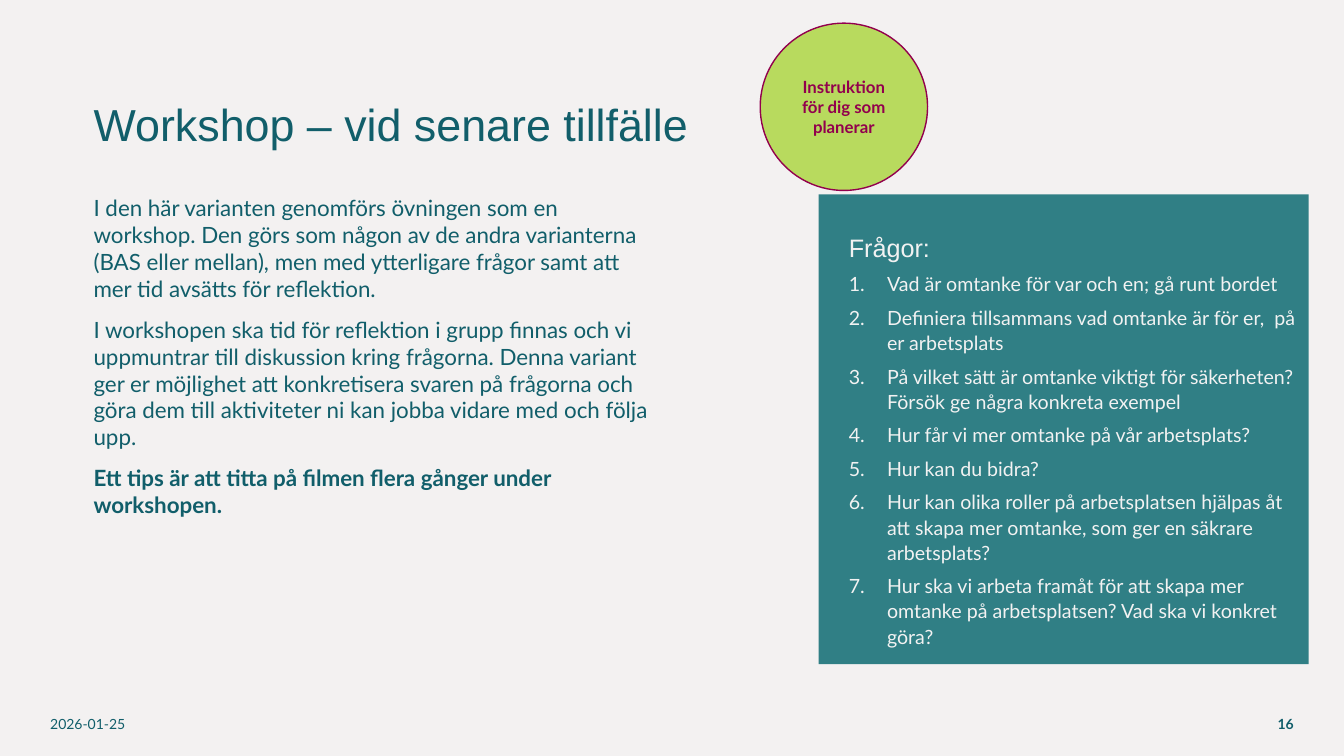
from pptx import Presentation
from pptx.dml.color import RGBColor
from pptx.enum import shapes, text
from pptx.oxml.ns import qn
from pptx.util import Inches, Pt
from lxml import etree

BACKGROUND = RGBColor(0xF3, 0xF1, 0xF1)
PETROL = RGBColor(0x11, 0x5E, 0x6A)
TEAL = RGBColor(0x30, 0x7F, 0x85)
OFF_WHITE = RGBColor(0xF2, 0xF2, 0xF2)
LIME = RGBColor(0xB8, 0xDA, 0x5E)
PLUM = RGBColor(0x92, 0x00, 0x4D)

INTRO = [
    "I den här varianten genomförs övningen som en workshop. Den görs som någon av "
    "de andra varianterna (BAS eller mellan), men med ytterligare frågor samt att "
    "mer tid avsätts för reflektion.",
    "I workshopen ska tid för reflektion i grupp finnas och vi uppmuntrar till "
    "diskussion kring frågorna. Denna variant ger er möjlighet att konkretisera "
    "svaren på frågorna och göra dem till aktiviteter ni kan jobba vidare med och "
    "följa upp.",
]
TIP = "Ett tips är att titta på filmen flera gånger under workshopen."
QUESTIONS = [
    "Vad är omtanke för var och en; gå runt bordet",
    "Definiera tillsammans vad omtanke är för er,  på er arbetsplats",
    "På vilket sätt är omtanke viktigt för säkerheten? Försök ge några konkreta exempel",
    "Hur får vi mer omtanke på vår arbetsplats?",
    "Hur kan du bidra?",
    "Hur kan olika roller på arbetsplatsen hjälpas åt att skapa mer omtanke, som ger "
    "en säkrare arbetsplats?",
    "Hur ska vi arbeta framåt för att skapa mer omtanke på arbetsplatsen? Vad ska vi "
    "konkret göra?",
]


def set_all(target, values):
    for name, value in values.items():
        setattr(target, name, value)


def add_box(page, place, **frame_format):
    box = page.shapes.add_textbox(*map(Inches, place))
    set_all(box.text_frame, {"word_wrap": True, **frame_format})
    return box.text_frame


def add_figure(page, kind, place, fill):
    figure = page.shapes.add_shape(kind, *map(Inches, place))
    figure.shadow.inherit = False
    figure.fill.solid()
    figure.fill.fore_color.rgb = fill
    figure.line.fill.background()
    return figure


def number(para):
    """Number the paragraph with a hanging indent."""
    props = para._p.get_or_add_pPr()
    indent = Inches(0.38)
    props.set("marL", str(indent))
    props.set("indent", str(-indent))
    font = etree.SubElement(props, qn("a:buFont"))
    font.set("typeface", "+mj-lt")
    etree.SubElement(props, qn("a:buAutoNum")).set("type", "arabicPeriod")


def write(frame, wording, size, color, name="Lato", bold=False, numbered=False, **layout):
    """Fill the first empty paragraph of the frame, or add the next one."""
    para = frame.paragraphs[0] if not frame.text else frame.add_paragraph()
    set_all(para, layout)
    if numbered:
        number(para)
    span = para.add_run()
    span.text = wording
    set_all(span.font, {"name": name, "size": Pt(size), "bold": bold})
    span.font.color.rgb = color


def add_intro(page):
    frame = add_box(page, (0.83, 1.69, 5.83, 4.76), margin_top=Inches(0.24))
    for index, wording in enumerate(INTRO):
        write(frame, wording, 16, PETROL, space_before=Pt(10 if index else 0))
    write(frame, TIP, 16, PETROL, bold=True, space_before=Pt(10))


def add_questions(page):
    add_figure(page, shapes.MSO_SHAPE.RECTANGLE, (8.12, 1.93, 4.86, 4.66), TEAL)
    frame = add_box(page, (8.32, 2.23, 4.67, 4.68))
    spacing = {"line_spacing": 1.07, "space_after": Pt(6)}
    write(frame, "Frågor:", 18, OFF_WHITE, "Arial", **spacing)
    for question in QUESTIONS:
        write(frame, question, 14, OFF_WHITE, numbered=True, **spacing)


def add_badge(page):
    badge = add_figure(page, shapes.MSO_SHAPE.OVAL, (7.54, 0.23, 1.66, 1.66), LIME)
    badge.line.color.rgb = PLUM
    badge.line.width = Pt(1)
    set_all(badge.text_frame, {"word_wrap": True, "vertical_anchor": text.MSO_ANCHOR.MIDDLE})
    write(badge.text_frame, "Instruktion för dig som planerar", 12, PLUM, bold=True,
          alignment=text.PP_ALIGN.CENTER)


def add_footer(page):
    middle = text.MSO_ANCHOR.MIDDLE
    date = add_box(page, (0.4, 6.98, 1.23, 0.4), vertical_anchor=middle)
    write(date, "2026-01-25", 10, PETROL)
    page_number = add_box(page, (9.93, 6.98, 3, 0.4), vertical_anchor=middle)
    write(page_number, "16", 10, PETROL, bold=True, alignment=text.PP_ALIGN.RIGHT)


def main():
    deck = Presentation()
    set_all(deck, {"slide_width": Inches(13.33), "slide_height": Inches(7.5)})
    page = deck.slides.add_slide(deck.slide_layouts[6])
    page.background.fill.solid()
    page.background.fill.fore_color.rgb = BACKGROUND

    # Left side: title and introduction
    add_intro(page)
    add_footer(page)
    title = add_box(page, (0.83, 0.86, 10.89, 0.98), margin_top=Inches(0.1))
    write(title, "Workshop – vid senare tillfälle", 32, PETROL, "Arial")

    # Right side: question panel and badge
    add_questions(page)
    add_badge(page)
    deck.save("out.pptx")


if __name__ == "__main__":
    main()
